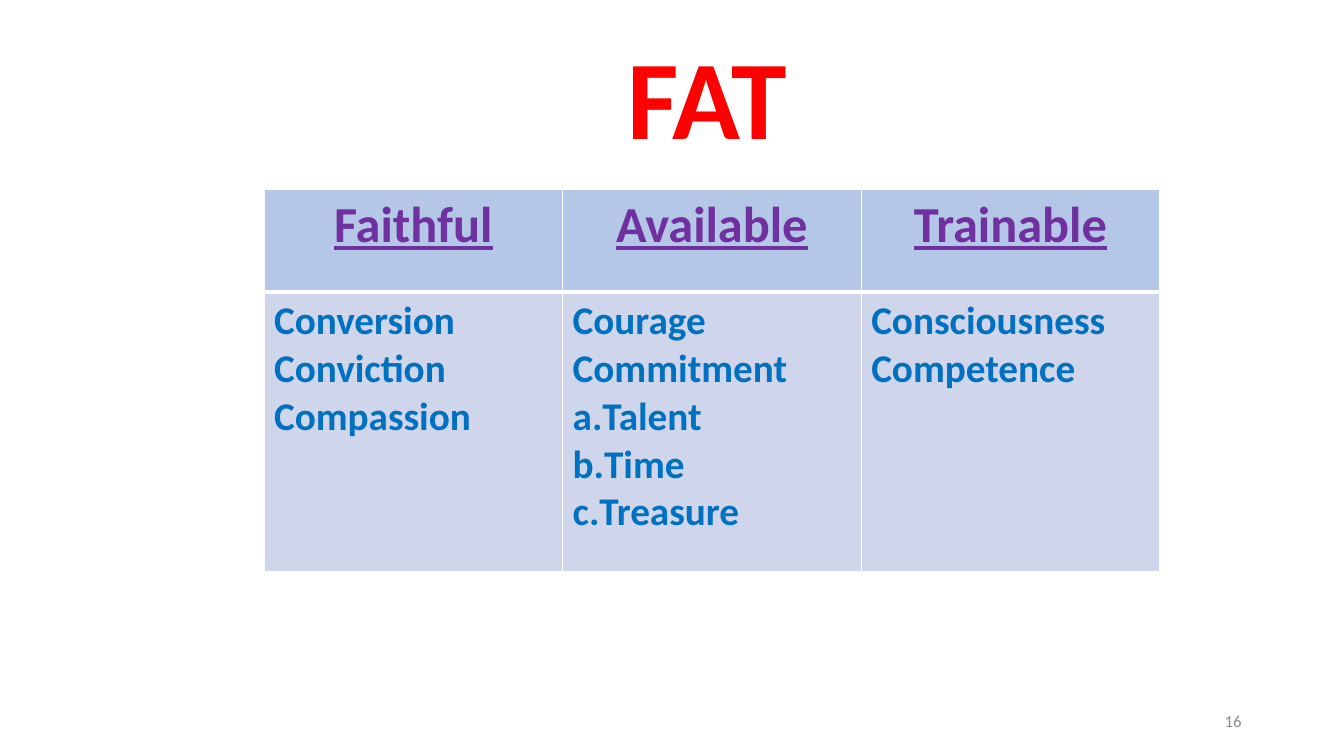
from dataclasses import dataclass

from lxml.etree import SubElement
from pptx import Presentation
from pptx.dml.color import RGBColor
from pptx.enum.text import MSO_ANCHOR as Anchor, PP_ALIGN as Align
from pptx.oxml.ns import qn
from pptx.util import Pt


@dataclass(frozen=True)
class Theme:
    font: str = "Calibri"
    title: str = "FF0000"
    heading: str = "7030A0"
    body: str = "0070C0"
    number: str = "8C8C8C"
    heading_fill: str = "B4C7E7"
    body_fill: str = "CFD5EA"
    border: str = "FFFFFF"
    title_size: int = 80
    heading_size: int = 36
    body_size: int = 28
    number_size: int = 12


THEME = Theme()

# Each column: heading, plain lines, lettered lines
COLUMNS = [
    ("Faithful", ["Conversion", "Conviction", "Compassion"], []),
    ("Available", ["Courage", "Commitment"], ["Talent", "Time", "Treasure"]),
    ("Trainable", ["Consciousness", "Competence"], []),
]


def style_para(para, size, color, bold=False, align=Align.LEFT):
    para.alignment = align
    font = para.font
    font.name = THEME.font
    font.size = Pt(size)
    font.bold = bold
    font.color.rgb = RGBColor.from_string(color)


def add_label(page, text, left, top, width, height, size, color, bold, align):
    box = page.shapes.add_textbox(Pt(left), Pt(top), Pt(width), Pt(height))
    frame = box.text_frame
    frame.word_wrap = True
    frame.vertical_anchor = Anchor.MIDDLE
    para = frame.paragraphs[0]
    para.text = text
    style_para(para, size, color, bold, align)
    return para


def add_letter(para):
    props = para._p.get_or_add_pPr()
    props.set("marL", "0")
    props.set("indent", str(-Pt(40)))
    SubElement(props, qn("a:buFont"), typeface="+mj-lt")
    SubElement(props, qn("a:buAutoNum"), type="alphaLcPeriod")


def style_cell(cell, fill, bottom_width):
    # Borders come before the fill in the cell properties
    props = cell._tc.get_or_add_tcPr()
    for side, width in (("L", 1), ("R", 1), ("T", 1), ("B", bottom_width)):
        line = SubElement(props, qn(f"a:ln{side}"), w=str(Pt(width)))
        solid = SubElement(line, qn("a:solidFill"))
        SubElement(solid, qn("a:srgbClr"), val=THEME.border)
    cell.fill.solid()
    cell.fill.fore_color.rgb = RGBColor.from_string(fill)


def fill_heading(cell, text):
    style_cell(cell, THEME.heading_fill, 3)
    para = cell.text_frame.paragraphs[0]
    para.text = text
    style_para(para, THEME.heading_size, THEME.heading, True, Align.CENTER)
    para.font.underline = True


def fill_body(cell, plain, lettered):
    style_cell(cell, THEME.body_fill, 1)
    frame = cell.text_frame
    frame.text = "\n".join(plain + lettered)
    for index, para in enumerate(frame.paragraphs):
        if index >= len(plain):
            add_letter(para)
        style_para(para, THEME.body_size, THEME.body, True)


def add_qualities(page):
    frame = page.shapes.add_table(
        2, len(COLUMNS), Pt(188.6), Pt(135.6), Pt(639.9), Pt(273))
    table = frame.table
    table.horz_banding = False
    for row, height in zip(table.rows, (73, 200)):
        row.height = Pt(height)
    for index, (heading, plain, lettered) in enumerate(COLUMNS):
        table.columns[index].width = Pt(213.3)
        fill_heading(table.cell(0, index), heading)
        fill_body(table.cell(1, index), plain, lettered)


def main():
    deck = Presentation()
    deck.slide_width, deck.slide_height = Pt(960), Pt(540)
    page = deck.slides.add_slide(deck.slide_layouts[6])

    # Title
    title = add_label(page, "FAT", 91.4, 21.6, 828, 104.4,
                      THEME.title_size, THEME.title, True, Align.CENTER)
    title.line_spacing = 0.9

    # Table of qualities
    add_qualities(page)

    # Slide number
    add_label(page, "16", 678, 500.5, 216, 28.8,
              THEME.number_size, THEME.number, False, Align.RIGHT)

    deck.save("out.pptx")


if __name__ == "__main__":
    main()
